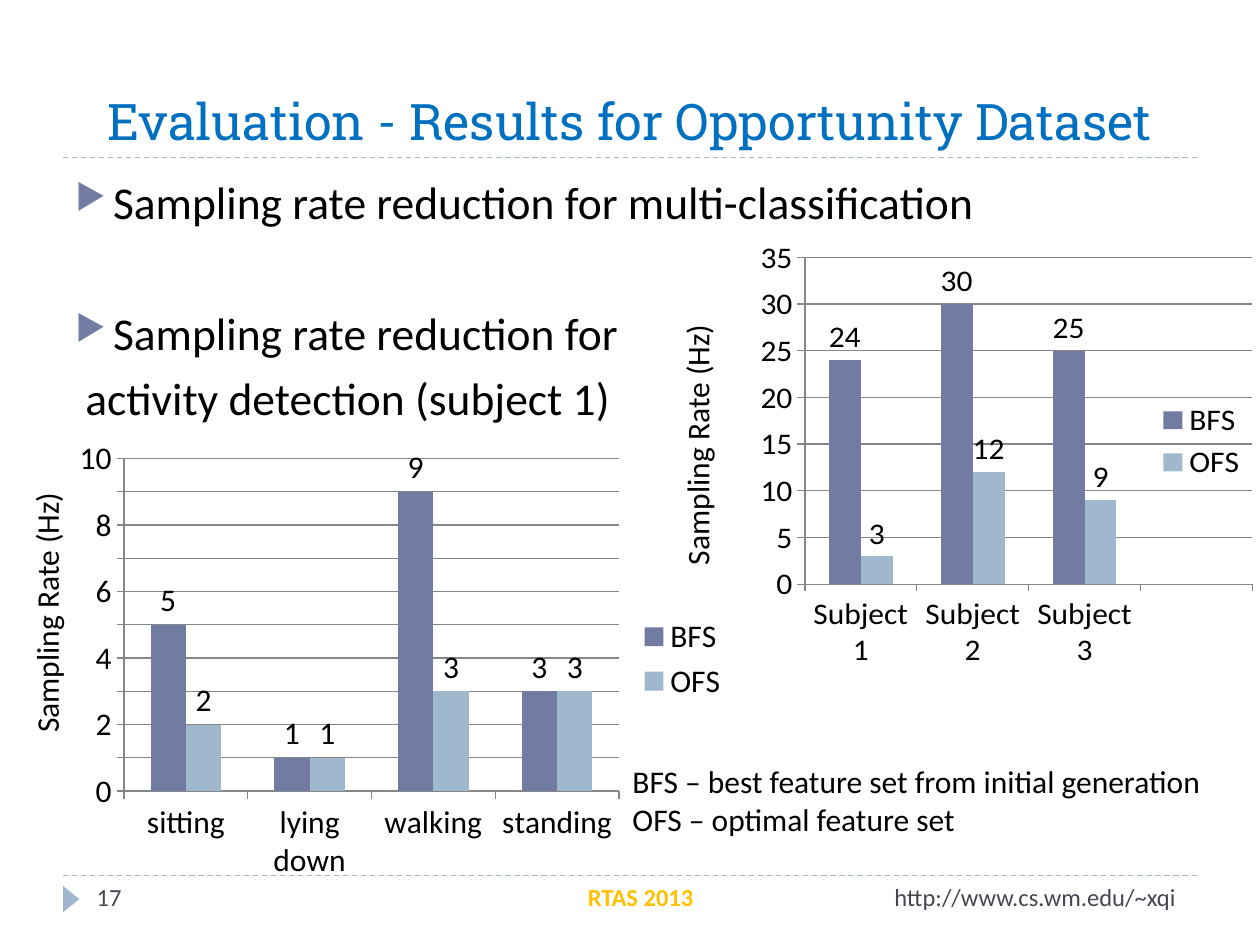
"""Build the slide on sampling rate results for the Opportunity dataset."""
from pptx import Presentation
from pptx.chart.data import CategoryChartData
from pptx.dml.color import RGBColor
from pptx.enum.chart import XL_CHART_TYPE, XL_LABEL_POSITION, XL_LEGEND_POSITION, XL_TICK_MARK
from pptx.enum.dml import MSO_LINE
from pptx.enum.shapes import MSO_CONNECTOR, MSO_SHAPE
from pptx.enum.text import MSO_ANCHOR, PP_ALIGN
from pptx.oxml import parse_xml
from pptx.oxml.ns import nsdecls, qn
from pptx.util import Cm, Pt

COLUMNS = XL_CHART_TYPE.COLUMN_CLUSTERED
OUTSIDE_END = XL_LABEL_POSITION.OUTSIDE_END
LEGEND_RIGHT = XL_LEGEND_POSITION.RIGHT
TICK_OUT, TICK_NONE = XL_TICK_MARK.OUTSIDE, XL_TICK_MARK.NONE
DASH = MSO_LINE.DASH
STRAIGHT = MSO_CONNECTOR.STRAIGHT
TRIANGLE = MSO_SHAPE.ISOSCELES_TRIANGLE
BOTTOM = MSO_ANCHOR.BOTTOM
LEFT, CENTER = PP_ALIGN.LEFT, PP_ALIGN.CENTER

BLACK = RGBColor(0x00, 0x00, 0x00)
BLUE = RGBColor(0x00, 0x70, 0xC0)
INDIGO = RGBColor(0x72, 0x7C, 0xA3)
PALE_BLUE = RGBColor(0x9F, 0xB8, 0xCD)
SLATE = RGBColor(0x46, 0x46, 0x53)
GOLD = RGBColor(0xFF, 0xC0, 0x00)
GRAY = RGBColor(0x86, 0x86, 0x86)
BODY_FONT, TITLE_FONT = "Calibri", "Roboto Slab"

TITLE = "Evaluation - Results for Opportunity Dataset"
BODY = [
    ("Sampling rate reduction for multi-classification", True, 0),
    ("Sampling rate reduction for", True, 43.5),
    ("activity detection (subject 1)", False, 6),
]
AXIS_TITLE = "Sampling Rate (Hz)"
AXIS_TITLE_PLACES = [(11, 8.08, 6.1, 1.02), (-2.11, 11.46, 6.1, 1.02)]
NOTES = ["BFS – best feature set from initial generation", "OFS – optimal feature set"]
FOOTER_TOP, FOOTER_HEIGHT = 17.65, 1.02
FOOTERS = [
    ("17", 1.7, 5.51, SLATE, LEFT, False),
    ("RTAS 2013", 8.05, 9.73, GOLD, CENTER, True),
    ("http://www.cs.wm.edu/~xqi", 17.78, 6.35, SLATE, LEFT, False),
]
RULE_TOPS = [3.18, FOOTER_TOP]
SERIES_COLORS = {"BFS": INDIGO, "OFS": PALE_BLUE}
CHARTS = [
    {
        "place": (10.36, 4.78, 15.04, 8.69),
        "plot": {"x": 0.39, "y": 0.05, "w": 0.6, "h": 0.8},
        "categories": ["Subject 1", "Subject 2", "Subject 3", ""],
        "values": {"BFS": [24, 30, 25, None], "OFS": [3, 12, 9, None]},
        "top": 35,
        "step": 5,
    },
    {
        "place": (1.27, 8.69, 13.67, 9.19),
        "plot": {"x": 0.09, "y": 0.06, "w": 0.73, "h": 0.73},
        "categories": ["sitting", "lying down", "walking", "standing"],
        "values": {"BFS": [5, 1, 9, 3], "OFS": [2, 1, 3, 3]},
        "top": 10,
        "step": 1,
    },
]


def to_cm(place):
    return [Cm(length) for length in place]


def style(para, size, color=BLACK, font=BODY_FONT, bold=False, align=LEFT):
    para.alignment = align
    for span in para.runs:
        span.font.size = Pt(size)
        span.font.name = font
        span.font.bold = bold
        span.font.color.rgb = color


def add_text(page, lines, place, size, wrap=True, **looks):
    box = page.shapes.add_textbox(*to_cm(place))
    box.text_frame.word_wrap = wrap
    box.text_frame.text = "\n".join(lines)
    for para in box.text_frame.paragraphs:
        style(para, size, **looks)
    return box


def indent(para, bulleted):
    properties = para._p.get_or_add_pPr()
    properties.set("marL", str(Cm(0.76 if bulleted else 0.2)))
    properties.set("indent", str(Cm(-0.76 if bulleted else 0)))
    if bulleted:
        for xml in (
            f'<a:buClr {nsdecls("a")}><a:srgbClr val="{INDIGO}"/></a:buClr>',
            f'<a:buSzPct {nsdecls("a")} val="76000"/>',
            f'<a:buChar {nsdecls("a")} char="▶"/>',
        ):
            properties.append(parse_xml(xml))


def add_body(page):
    lines = [text for text, _, _ in BODY]
    box = add_text(page, lines, (1.27, 3.38, 22.86, 13.72), 26)
    for para, (_, bulleted, gap) in zip(box.text_frame.paragraphs, BODY):
        para.space_before = Pt(gap)
        indent(para, bulleted)


def place_plot(chart, plot):
    area = chart._chartSpace.find(qn("c:chart")).find(qn("c:plotArea"))
    for layout in area.findall(qn("c:layout")):
        area.remove(layout)
    modes = '<c:layoutTarget val="inner"/><c:xMode val="edge"/><c:yMode val="edge"/>'
    sizes = "".join(f'<c:{key} val="{value}"/>' for key, value in plot.items())
    area.insert(0, parse_xml(
        f'<c:layout {nsdecls("c")}><c:manualLayout>{modes}{sizes}</c:manualLayout></c:layout>'))


def style_line(line):
    line.color.rgb = GRAY
    line.width = Pt(0.75)


def add_rate_chart(page, content):
    data = CategoryChartData()
    data.categories = content["categories"]
    for name, values in content["values"].items():
        data.add_series(name, values)
    chart = page.shapes.add_chart(COLUMNS, *to_cm(content["place"]), data).chart
    chart.has_title = False
    chart.font.size = Pt(18)
    chart.font.name = BODY_FONT
    chart.font.color.rgb = BLACK
    chart.has_legend = True
    chart.legend.position = LEGEND_RIGHT
    chart.legend.include_in_layout = False
    for axis in (chart.category_axis, chart.value_axis):
        axis.major_tick_mark = TICK_OUT
        axis.minor_tick_mark = TICK_NONE
        style_line(axis.format.line)
    scale = chart.value_axis
    scale.minimum_scale, scale.maximum_scale = 0, content["top"]
    scale.major_unit = content["step"]
    scale.has_major_gridlines = True
    style_line(scale.major_gridlines.format.line)
    plot = chart.plots[0]
    plot.gap_width, plot.overlap = 150, 0
    plot.vary_by_categories = False
    for series in plot.series:
        series.format.fill.solid()
        series.format.fill.fore_color.rgb = SERIES_COLORS[series.name]
        series.data_labels.show_value = True
        series.data_labels.position = OUTSIDE_END
    place_plot(chart, content["plot"])


def add_rule(page, top):
    rule = page.shapes.add_connector(STRAIGHT, *to_cm((1.27, top, 24.13, top)))
    rule.line.color.rgb = PALE_BLUE
    rule.line.width = Pt(0.75)
    rule.line.dash_style = DASH
    rule._element.spPr.append(parse_xml(f'<a:effectLst {nsdecls("a")}/>'))


def add_marker(page):
    marker = page.shapes.add_shape(TRIANGLE, *to_cm((1.17, 17.96, 0.53, 0.33)))
    marker.rotation = 90
    marker.shadow.inherit = False
    marker.fill.solid()
    marker.fill.fore_color.rgb = PALE_BLUE
    marker.line.fill.background()


def main():
    deck = Presentation()
    deck.slide_width, deck.slide_height = Cm(25.4), Cm(19.05)
    page = deck.slides.add_slide(deck.slide_layouts[5])
    for top in RULE_TOPS:
        add_rule(page, top)
    add_marker(page)
    title = page.shapes.title
    title.left, title.top, title.width, title.height = to_cm((1.27, 0.43, 22.86, 2.74))
    title.text_frame.text = TITLE
    title.text_frame.vertical_anchor = BOTTOM
    style(title.text_frame.paragraphs[0], 28.8, BLUE, TITLE_FONT, align=CENTER)
    add_body(page)
    for content in CHARTS:
        add_rate_chart(page, content)
    for place in AXIS_TITLE_PLACES:
        add_text(page, [AXIS_TITLE], place, 18).rotation = 270
    add_text(page, NOTES, (12.5, 15.24, 13.18, 1.8), 18, wrap=False)
    for text, left, width, color, align, bold in FOOTERS:
        place = (left, FOOTER_TOP, width, FOOTER_HEIGHT)
        add_text(page, [text], place, 14, color=color, align=align, bold=bold)
    deck.save("out.pptx")


if __name__ == "__main__":
    main()
